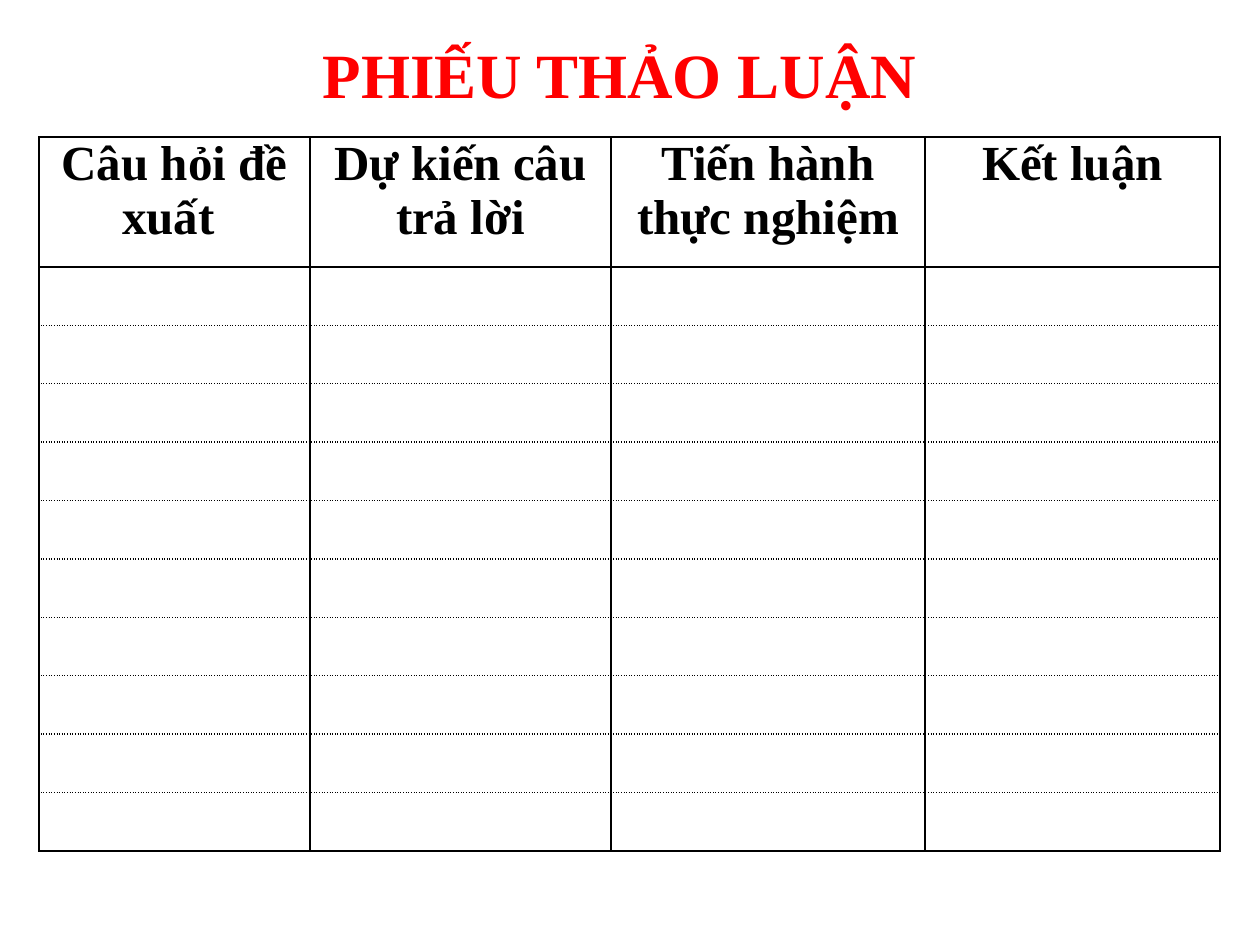
from lxml import etree
from pptx import Presentation
from pptx.dml.color import RGBColor
from pptx.enum.text import MSO_ANCHOR, MSO_AUTO_SIZE, PP_ALIGN
from pptx.oxml.ns import qn
from pptx.util import Emu, Pt

PX = 914400 / 126
CENTER = PP_ALIGN.CENTER
MIDDLE = MSO_ANCHOR.MIDDLE
GROW = MSO_AUTO_SIZE.SHAPE_TO_FIT_TEXT
BLACK = "000000"
RED = "FF0000"
FONT = "Times New Roman"
HEADINGS = ["Câu hỏi đề xuất ", "Dự kiến câu trả lời", "Tiến hành thực nghiệm", "Kết luận"]
COLUMN_WIDTHS = [271, 301, 314, 295]
HEADER_HEIGHT = 130
ANSWER_LINES = 10
CELL_MARGINS = {"margin_left": 6, "margin_right": 6, "margin_top": 0, "margin_bottom": 0}


def px(length):
    """Turn px into EMU."""
    return Emu(round(length * PX))


def color(code):
    """Turn a hex string into a colour."""
    return RGBColor.from_string(code)


def write(frame, wording, size, code):
    """Write one bold centred paragraph into a text frame."""
    paragraph = frame.paragraphs[0]
    paragraph.alignment = CENTER
    run = paragraph.add_run()
    run.text = wording
    for key, value in {"name": FONT, "size": Pt(size), "bold": True}.items():
        setattr(run.font, key, value)
    run.font.color.rgb = color(code)


def draw_borders(cell, dashes):
    """Give a cell 1 pt black borders with a dash for each side."""
    properties = cell._tc.get_or_add_tcPr()
    for place, (side, dash) in enumerate(dashes.items()):
        line = etree.Element(qn(f"a:ln{side}"), w=str(Pt(1)))
        fill = etree.SubElement(line, qn("a:solidFill"))
        etree.SubElement(fill, qn("a:srgbClr"), val=BLACK)
        etree.SubElement(line, qn("a:prstDash"), val=dash)
        properties.insert(place, line)


def add_title(slide, left, top, width, height):
    """Place the worksheet title in its box."""
    title = slide.shapes.add_textbox(px(left), px(top), px(width), px(height))
    frame = title.text_frame
    for key, value in {"word_wrap": False, "auto_size": GROW, "vertical_anchor": MIDDLE}.items():
        setattr(frame, key, value)
    write(frame, "PHIẾU THẢO LUẬN ", 36, RED)


def add_worksheet(slide, left, top, width, height):
    """Place the worksheet: a heading row above dotted answer lines."""
    worksheet = slide.shapes.add_table(
        ANSWER_LINES + 1, len(HEADINGS), px(left), px(top), px(width), px(height)
    ).table
    worksheet.first_row = worksheet.horz_banding = False
    for column, share in zip(worksheet.columns, COLUMN_WIDTHS):
        column.width = px(width * share / sum(COLUMN_WIDTHS))
    line_height = (height - HEADER_HEIGHT) / ANSWER_LINES
    for index, row in enumerate(worksheet.rows):
        row.height = px(line_height if index else HEADER_HEIGHT)
        upper = "sysDot" if index > 1 else "solid"
        lower = "sysDot" if 0 < index < ANSWER_LINES else "solid"
        for cell in row.cells:
            for key, value in CELL_MARGINS.items():
                setattr(cell, key, px(value))
            cell.fill.background()
            draw_borders(cell, {"L": "solid", "R": "solid", "T": upper, "B": lower})
    for cell, heading in zip(worksheet.rows[0].cells, HEADINGS):
        write(cell.text_frame, heading, 28, BLACK)


def main():
    """Build the discussion worksheet slide."""
    presentation = Presentation()
    presentation.slide_width, presentation.slide_height = px(1260), px(945)
    slide = presentation.slides.add_slide(presentation.slide_layouts[6])
    add_worksheet(slide, 39, 137, 1181, 714)
    add_title(slide, 307, 29, 641, 89)
    presentation.save("out.pptx")


if __name__ == "__main__":
    main()
